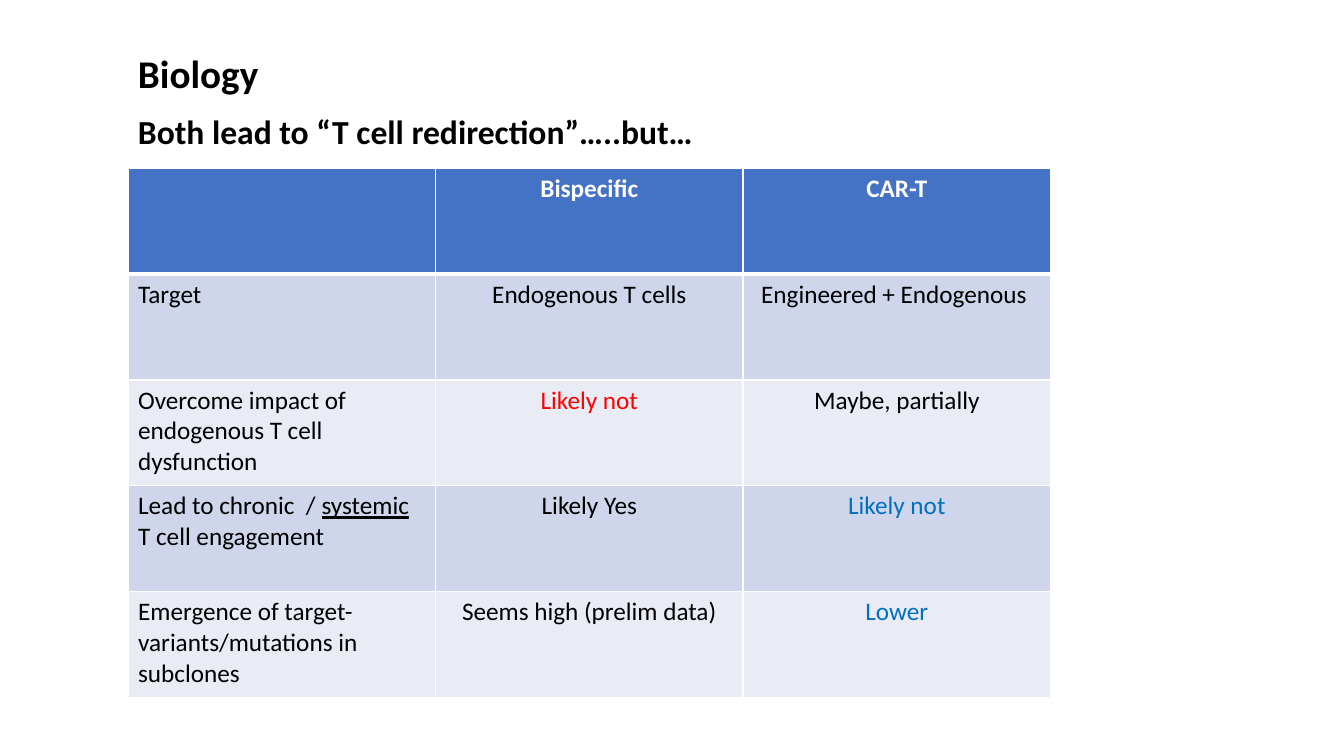
from lxml import etree
from pptx import Presentation
from pptx import util as u
from pptx.dml.color import RGBColor
from pptx.enum import text
from pptx.oxml.ns import qn

BLACK = RGBColor(0x00, 0x00, 0x00)
WHITE = RGBColor(0xFF, 0xFF, 0xFF)
RED = RGBColor(0xFF, 0x00, 0x00)
BLUE = RGBColor(0x00, 0x70, 0xC0)
HEAD = RGBColor(0x44, 0x72, 0xC4)
BANDS = [RGBColor(0xCF, 0xD5, 0xEA), RGBColor(0xE9, 0xEB, 0xF5)]
FONT = "Calibri"
PX = 9144

TITLES = [
    ("Biology", 28, (127, 44, 482, 57), True),
    ("Both lead to “T cell redirection”…..but…", 24, (127, 105, 583, 50), False),
]
HEADS = ["", "Bispecific", "CAR-T"]
ROWS = [
    (["Target"], ("Endogenous T cells", BLACK),
     ("Engineered + Endogenous ", BLACK)),
    (["Overcome impact of endogenous T cell dysfunction"],
     ("Likely not", RED), ("Maybe, partially", BLACK)),
    (["Lead to chronic  / ", "systemic", " T cell engagement"],
     ("Likely Yes", BLACK), ("Likely not", BLUE)),
    (["Emergence of target-variants/mutations in subclones"],
     ("Seems high (prelim data)", BLACK), ("Lower", BLUE)),
]
UNDER = "systemic"
LEFT, TOP, WIDE, HIGH = 127, 167, 305, 105


def add_run(para, words, size, color, bold=False):
    run = para.add_run()
    run.text = words
    font = run.font
    font.name, font.size, font.bold = FONT, u.Pt(size), bold
    font.color.rgb = color
    if words == UNDER:
        font.underline = True


def add_edge(cell, side, points):
    props = cell._tc.get_or_add_tcPr()
    line = etree.Element(qn("a:ln" + side), w=str(u.Pt(points)))
    fill = etree.SubElement(line, qn("a:solidFill"))
    etree.SubElement(fill, qn("a:srgbClr"), val=str(WHITE))
    props.insert("LRTB".index(side), line)


def add_title(slide, words, size, place, wrap):
    box = slide.shapes.add_textbox(*(n * PX for n in place))
    frame = box.text_frame
    frame.word_wrap = wrap
    frame.auto_size = text.MSO_AUTO_SIZE.SHAPE_TO_FIT_TEXT
    add_run(frame.paragraphs[0], words, size, BLACK, True)


def fill_cell(cell, runs, fill, row, col):
    cell.fill.solid()
    cell.fill.fore_color.rgb = fill
    para = cell.text_frame.paragraphs[0]
    if col:
        para.alignment = text.PP_ALIGN.CENTER
    for words, color in runs:
        if words:
            add_run(para, words, 18, color, row == 0)
    for side in "LRTB":
        thick = (side, row) in (("B", 0), ("T", 1))
        add_edge(cell, side, 3 if thick else 1)


def add_grid(slide):
    grid = [[[(words, WHITE)] for words in HEADS]]
    for label, *facts in ROWS:
        grid.append([[(words, BLACK) for words in label]] + [[f] for f in facts])
    count = len(grid)
    size = (LEFT, TOP, WIDE * len(HEADS), HIGH * count)
    frame = slide.shapes.add_table(count, len(HEADS), *(n * PX for n in size))
    for row, cells in enumerate(grid):
        fill = BANDS[(row - 1) % 2] if row else HEAD
        for col, runs in enumerate(cells):
            fill_cell(frame.table.cell(row, col), runs, fill, row, col)


def main():
    deck = Presentation()
    deck.slide_width, deck.slide_height = 1333 * PX, 750 * PX
    slide = deck.slides.add_slide(deck.slide_layouts[6])
    add_grid(slide)
    for title in TITLES:
        add_title(slide, *title)
    deck.save("out.pptx")


if __name__ == "__main__":
    main()
